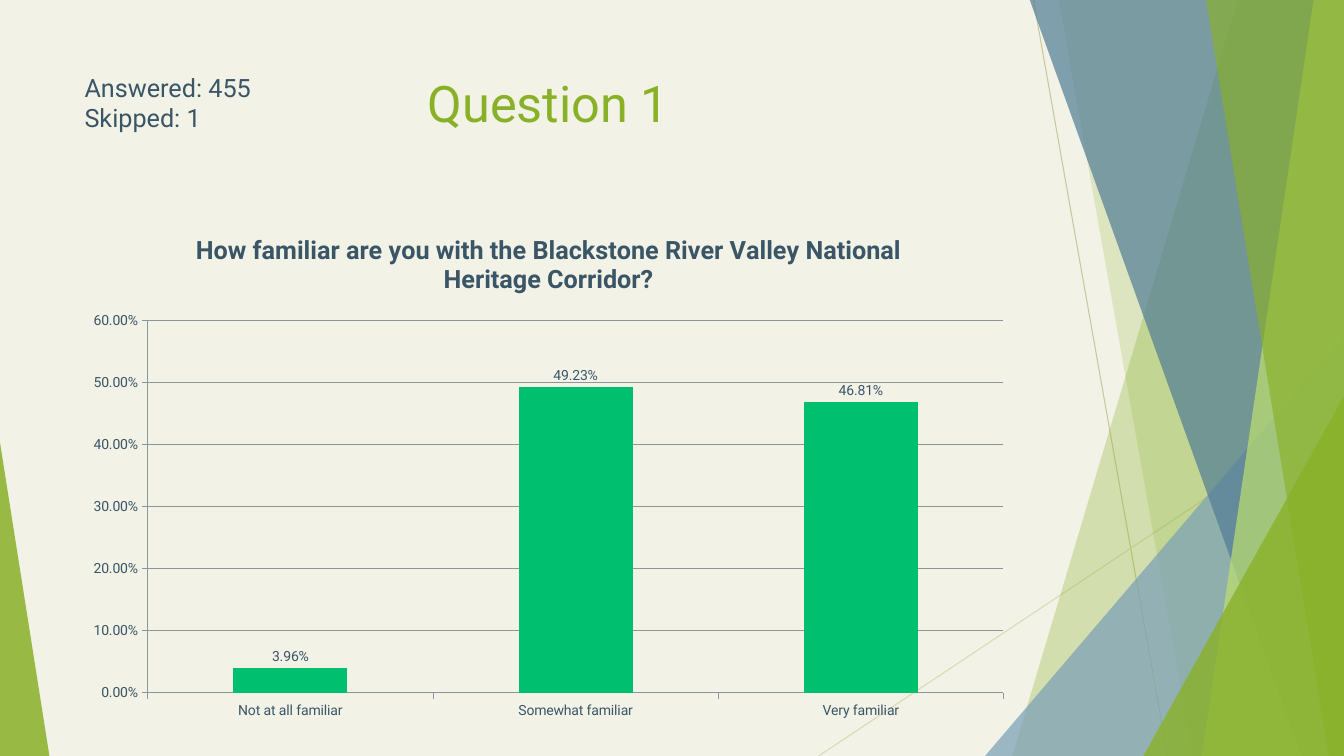
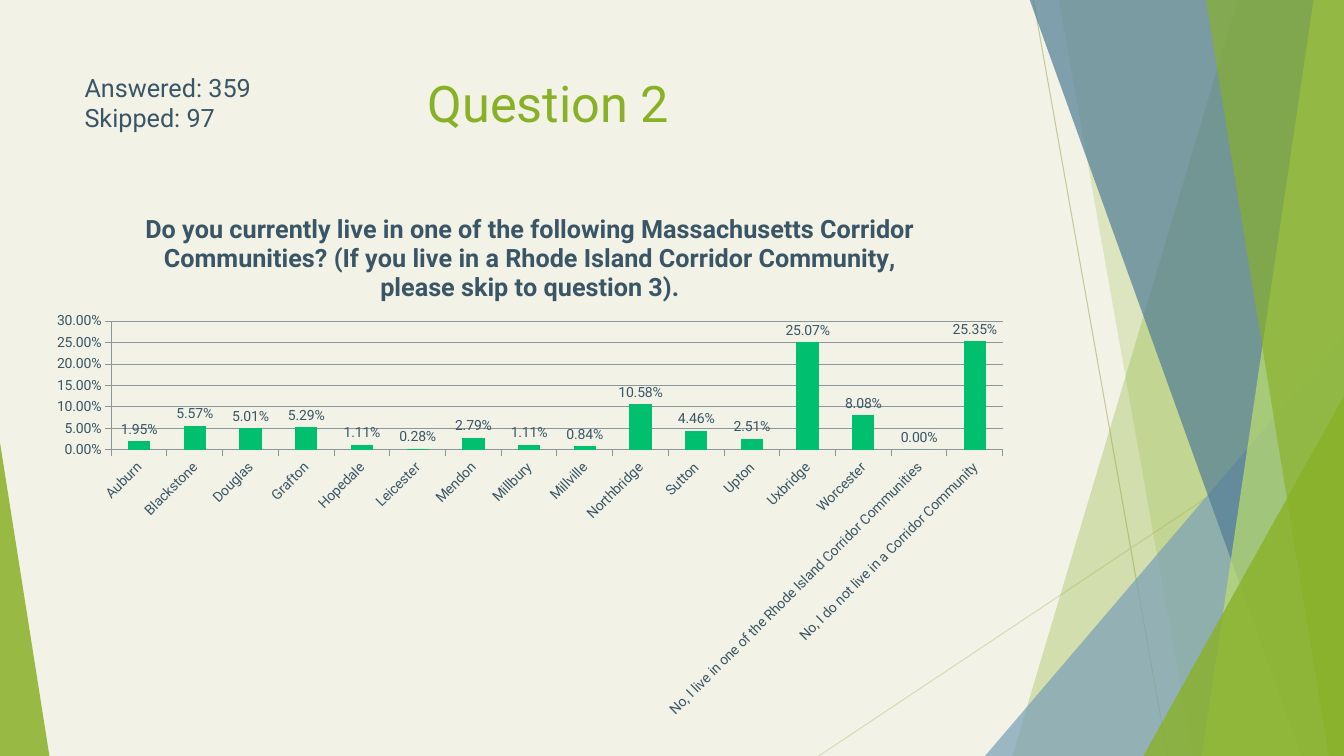
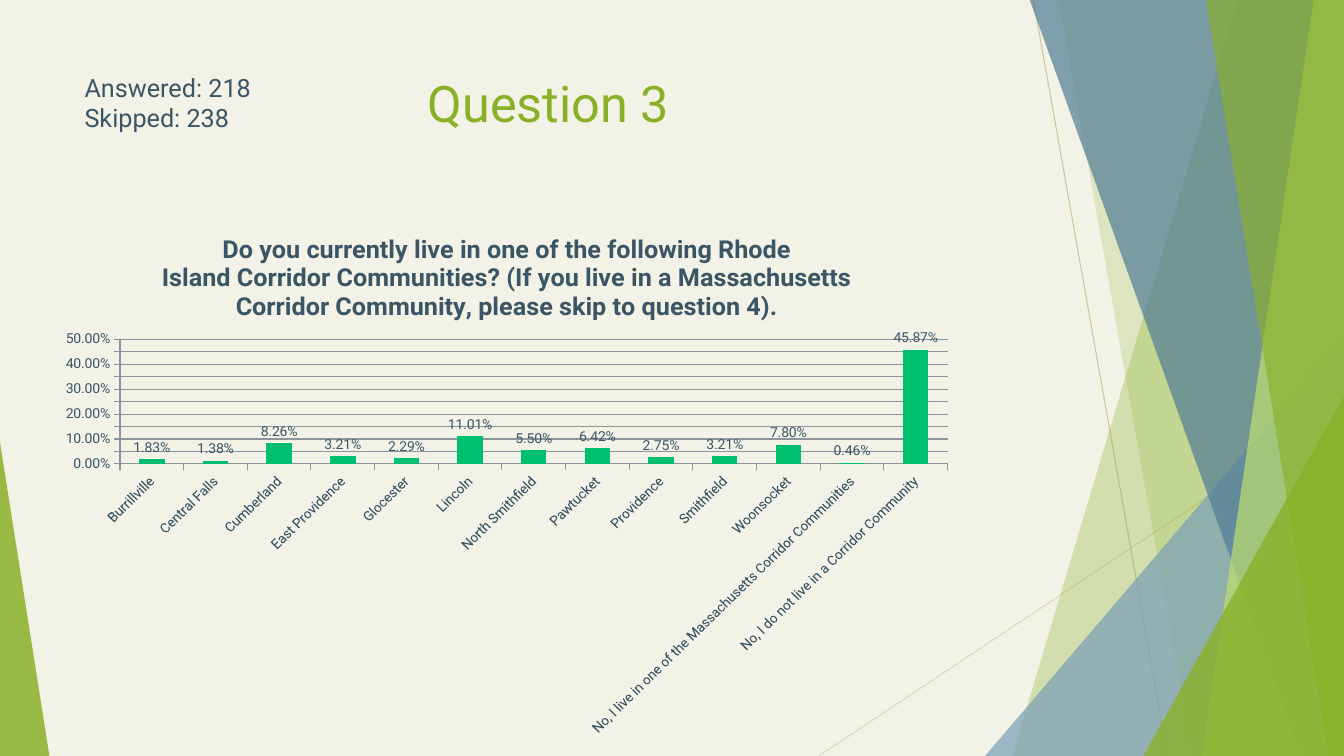
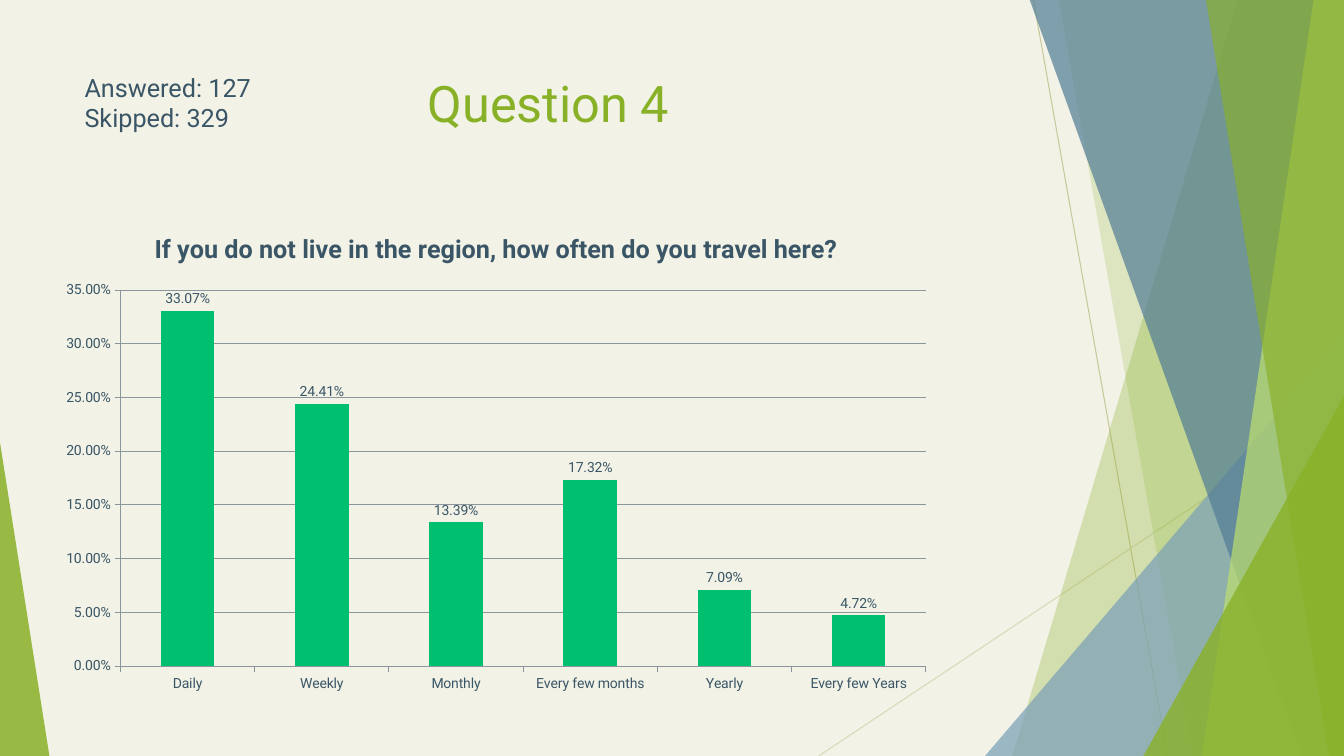
"""Build four survey result slides, each with a title, response counts and a column chart."""
from lxml import etree
from pptx import Presentation
from pptx.chart.data import CategoryChartData
from pptx.dml.color import RGBColor
from pptx.enum.chart import XL_CHART_TYPE, XL_LABEL_POSITION, XL_TICK_MARK
from pptx.enum.shapes import MSO_CONNECTOR, MSO_SHAPE
from pptx.enum.text import MSO_ANCHOR, MSO_AUTO_SIZE, PP_ALIGN
from pptx.oxml.ns import qn
from pptx.util import Inches, Pt

COLUMNS = XL_CHART_TYPE.COLUMN_CLUSTERED
OUTSIDE_END = XL_LABEL_POSITION.OUTSIDE_END
TICK_OUT, TICK_NONE = XL_TICK_MARK.OUTSIDE, XL_TICK_MARK.NONE
STRAIGHT = MSO_CONNECTOR.STRAIGHT
TRIANGLE = MSO_SHAPE.ISOSCELES_TRIANGLE
TOP = MSO_ANCHOR.TOP
CENTER = PP_ALIGN.CENTER
FIT_SHAPE = MSO_AUTO_SIZE.SHAPE_TO_FIT_TEXT

WIDTH, HEIGHT = 13.33, 7.5
BAND_TOP = -0.01
TITLE_BOX = (0.74, 0.67, 9.4, 1.44)
COUNTS_BOX = (0.74, 0.67, 1.91, 0.71)
TITLE_ONLY = 5
SLANTED = -45
PERCENT = "0.00%"
NO_BREAK_SPACE = chr(160)
THIN = Pt(0.75)

BACKGROUND, GREEN, INK = "F2F2E7", "89B128", "3A5666"
BAR, GRID = "00BF6F", "8B959C"

TITLE_FONT = {"name": "Roboto", "size": Pt(36), "bold": False, "color": GREEN}
COUNTS_FONT = {"name": "Roboto", "size": Pt(18), "color": INK}
CHART_FONT = {"name": "Roboto", "size": Pt(10), "bold": False, "color": INK}
CHART_TITLE_FONT = {"name": "Roboto", "size": Pt(18), "bold": True, "color": INK}

DECORATION = [
    ("line", (10.25, 0, 11.58, HEIGHT), "C8C89A", 100),
    ("line", (WIDTH, 4.03, 8.12, HEIGHT), "D9D9B9", 100),
    ("band", (12.28, 10.04), GREEN, 30),
    ("band", (10.5, 11.83), GREEN, 20),
    ("right corner", (3.56, 4.17), "7BA1B7", 72),
    ("band", (10.21, 12.91), "517C94", 70),
    ("band", (13.03, 11.92), "BEDF70", 70),
    ("band", (11.96, 13.18), GREEN, 65),
    ("right corner", (1.99, 3.57), GREEN, 80),
    ("left corner", (0.49, 3.11), GREEN, 85),
]

QUESTIONS = [
    {
        "answered": 455, "skipped": 1,
        "text": "How familiar are you with the Blackstone River Valley National Heritage Corridor?",
        "box": (0.74, 2.11, 9.4, 5.12), "maximum": 0.6, "step": 0.1, "angle": 0,
        "answers": [
            ("Not at all familiar", 0.0396),
            ("Somewhat familiar", 0.4923),
            ("Very familiar", 0.4681),
        ],
    },
    {
        "answered": 359, "skipped": 97,
        "text": "Do you currently live in one of the following "
                f"Massachusetts{NO_BREAK_SPACE}Corridor Communities? "
                "(If you live in a Rhode Island Corridor Community, please skip to question 3).",
        "box": (0.37, 1.9, 9.77, 5.22), "maximum": 0.3, "step": 0.05, "angle": SLANTED,
        "answers": [
            ("Auburn", 0.0195), ("Blackstone", 0.0557), ("Douglas", 0.0501),
            ("Grafton", 0.0529), ("Hopedale", 0.0111), ("Leicester", 0.0028),
            ("Mendon", 0.0279), ("Millbury", 0.0111), ("Millville", 0.0084),
            ("Northbridge", 0.1058), ("Sutton", 0.0446), ("Upton", 0.0251),
            ("Uxbridge", 0.2507), ("Worcester", 0.0808),
            ("No, I live in one of the Rhode Island Corridor Communities", 0),
            ("No, I do not live in a Corridor Community", 0.2535),
        ],
    },
    {
        "answered": 218, "skipped": 238,
        "text": "Do you currently live in one of the following "
                f"Rhode Island{NO_BREAK_SPACE}Corridor Communities? "
                "(If you live in a Massachusetts Corridor Community, please skip to question 4).",
        "box": (0.47, 2.11, 9.11, 5.19), "maximum": 0.5, "step": 0.05, "angle": SLANTED,
        "answers": [
            ("Burrillville", 0.0183), ("Central Falls", 0.0138), ("Cumberland", 0.0826),
            ("East Providence", 0.0321), ("Glocester", 0.0229), ("Lincoln", 0.1101),
            ("North Smithfield", 0.055), ("Pawtucket", 0.0642), ("Providence", 0.0275),
            ("Smithfield", 0.0321), ("Woonsocket", 0.078),
            ("No, I live in one of the Massachusetts Corridor Communities", 0.0046),
            ("No, I do not live in a Corridor Community", 0.4587),
        ],
    },
    {
        "answered": 127, "skipped": 329,
        "text": "If you do not live in the region, how often do you travel here?",
        "box": (0.48, 2.11, 8.88, 4.85), "maximum": 0.35, "step": 0.05, "angle": 0,
        "answers": [
            ("Daily", 0.3307), ("Weekly", 0.2441), ("Monthly", 0.1339),
            ("Every few months", 0.1732), ("Yearly", 0.0709), ("Every few Years", 0.0472),
        ],
    },
]


def rgb(value):
    """Turn a hex string into a colour."""
    return RGBColor.from_string(value)


def inches(values):
    """Turn a sequence of numbers into lengths."""
    return [Inches(value) for value in values]


def format_font(font, values):
    """Set font attributes from a dict."""
    for name, value in values.items():
        if name == "color":
            font.color.rgb = rgb(value)
        else:
            setattr(font, name, value)


def format_line(line, color):
    """Make a line thin and coloured."""
    line.color.rgb = rgb(color)
    line.width = THIN


def paint(shape, color, opacity):
    """Give a shape a see-through fill without line or shadow."""
    shape.shadow.inherit = False
    shape.fill.solid()
    shape.fill.fore_color.rgb = rgb(color)
    shape.line.fill.background()
    color_element = shape.element.xpath("p:spPr/a:solidFill/a:srgbClr")[0]
    etree.SubElement(color_element, qn("a:alpha"), val=str(opacity * 1000))


def add_line(shapes, ends, color):
    """Draw a thin straight line."""
    line = shapes.add_connector(STRAIGHT, *inches(ends))
    format_line(line.line, color)
    etree.SubElement(line.element.spPr, qn("a:effectLst"))


def add_band(shapes, top_x, bottom_x):
    """Draw a band that reaches from a slanted edge to the right side."""
    corners = [(top_x, BAND_TOP), (WIDTH, BAND_TOP), (WIDTH, HEIGHT), (bottom_x, HEIGHT)]
    points = [inches(corner) for corner in corners]
    builder = shapes.build_freeform(*points[0])
    builder.add_line_segments(points[1:], close=True)
    return builder.convert_to_shape()


def add_corner(shapes, width, height, at_right):
    """Draw a right triangle in a bottom corner."""
    left = WIDTH - width if at_right else 0
    corner = shapes.add_shape(TRIANGLE, *inches((left, HEIGHT - height, width, height)))
    corner.adjustments[0] = int(at_right)
    return corner


def decorate_master(master, slide):
    """Draw the decoration on a slide and move it to the master."""
    group = slide.shapes.add_group_shape()
    for kind, geometry, color, opacity in DECORATION:
        if kind == "line":
            add_line(group.shapes, geometry, color)
            continue
        if kind == "band":
            shape = add_band(group.shapes, *geometry)
        else:
            shape = add_corner(group.shapes, *geometry, kind == "right corner")
        paint(shape, color, opacity)
    for number, properties in enumerate(group.element.xpath(".//p:cNvPr"), 101):
        properties.set("id", str(number))
    master.shapes.element.insert(2, group.element)


def prepare_master(master):
    """Set the background and the title place for all slides."""
    master.background.fill.solid()
    master.background.fill.fore_color.rgb = rgb(BACKGROUND)
    title = next(shape for shape in master.placeholders if shape.placeholder_format.idx == 0)
    title.left, title.top, title.width, title.height = inches(TITLE_BOX)
    title.text_frame.vertical_anchor = TOP


def add_title(slide, text):
    """Fill the title placeholder."""
    frame = slide.shapes.title.text_frame
    frame.text = text
    frame.vertical_anchor = TOP
    frame.paragraphs[0].alignment = CENTER
    format_font(frame.paragraphs[0].runs[0].font, TITLE_FONT)


def add_counts(slide, question):
    """Write how many people answered and skipped."""
    frame = slide.shapes.add_textbox(*inches(COUNTS_BOX)).text_frame
    frame.word_wrap = True
    frame.auto_size = FIT_SHAPE
    frame.text = f"Answered: {question['answered']}\nSkipped: {question['skipped']}"
    for paragraph in frame.paragraphs:
        format_font(paragraph.runs[0].font, COUNTS_FONT)


def format_axes(chart, question):
    """Set scale, ticks, lines and label angle of both axes."""
    for axis in (chart.category_axis, chart.value_axis):
        axis.major_tick_mark = TICK_OUT
        axis.minor_tick_mark = TICK_NONE
        format_line(axis.format.line, GRID)
        format_font(axis.tick_labels.font, CHART_FONT)
    chart.category_axis.has_major_gridlines = False
    body = chart.element.xpath("c:chart/c:plotArea/c:catAx/c:txPr/a:bodyPr")[0]
    body.set("rot", str(question["angle"] * 60000))
    body.set("vert", "horz")

    value_axis = chart.value_axis
    value_axis.minimum_scale = 0
    value_axis.maximum_scale = question["maximum"]
    value_axis.major_unit = question["step"]
    value_axis.has_major_gridlines = True
    format_line(value_axis.major_gridlines.format.line, GRID)
    value_axis.tick_labels.number_format = PERCENT
    value_axis.tick_labels.number_format_is_linked = False


def add_answers_chart(slide, question):
    """Add the column chart of a question's answers."""
    names, shares = zip(*question["answers"])
    data = CategoryChartData(number_format=PERCENT)
    data.categories = names
    data.add_series("Series 1", shares)
    chart = slide.shapes.add_chart(COLUMNS, *inches(question["box"]), data).chart
    format_font(chart.font, CHART_FONT)
    chart.has_legend = False
    chart.has_title = True
    title_frame = chart.chart_title.text_frame
    title_frame.text = question["text"]
    format_font(title_frame.paragraphs[0].runs[0].font, CHART_TITLE_FONT)
    chart.chart_title.include_in_layout = False
    format_axes(chart, question)

    plot = chart.plots[0]
    plot.gap_width = 150
    plot.vary_by_categories = False
    series = plot.series[0]
    series.format.fill.solid()
    series.format.fill.fore_color.rgb = rgb(BAR)
    labels = series.data_labels
    labels.show_value = True
    labels.position = OUTSIDE_END
    labels.number_format = PERCENT
    labels.number_format_is_linked = False
    format_font(labels.font, CHART_FONT)


def main():
    """Build and save the presentation."""
    presentation = Presentation()
    presentation.slide_width, presentation.slide_height = inches((WIDTH, HEIGHT))
    prepare_master(presentation.slide_master)
    for number, question in enumerate(QUESTIONS, 1):
        slide = presentation.slides.add_slide(presentation.slide_layouts[TITLE_ONLY])
        if number == 1:
            decorate_master(presentation.slide_master, slide)
        add_title(slide, f"Question {number}")
        add_answers_chart(slide, question)
        add_counts(slide, question)
    presentation.save("out.pptx")


if __name__ == "__main__":
    main()
